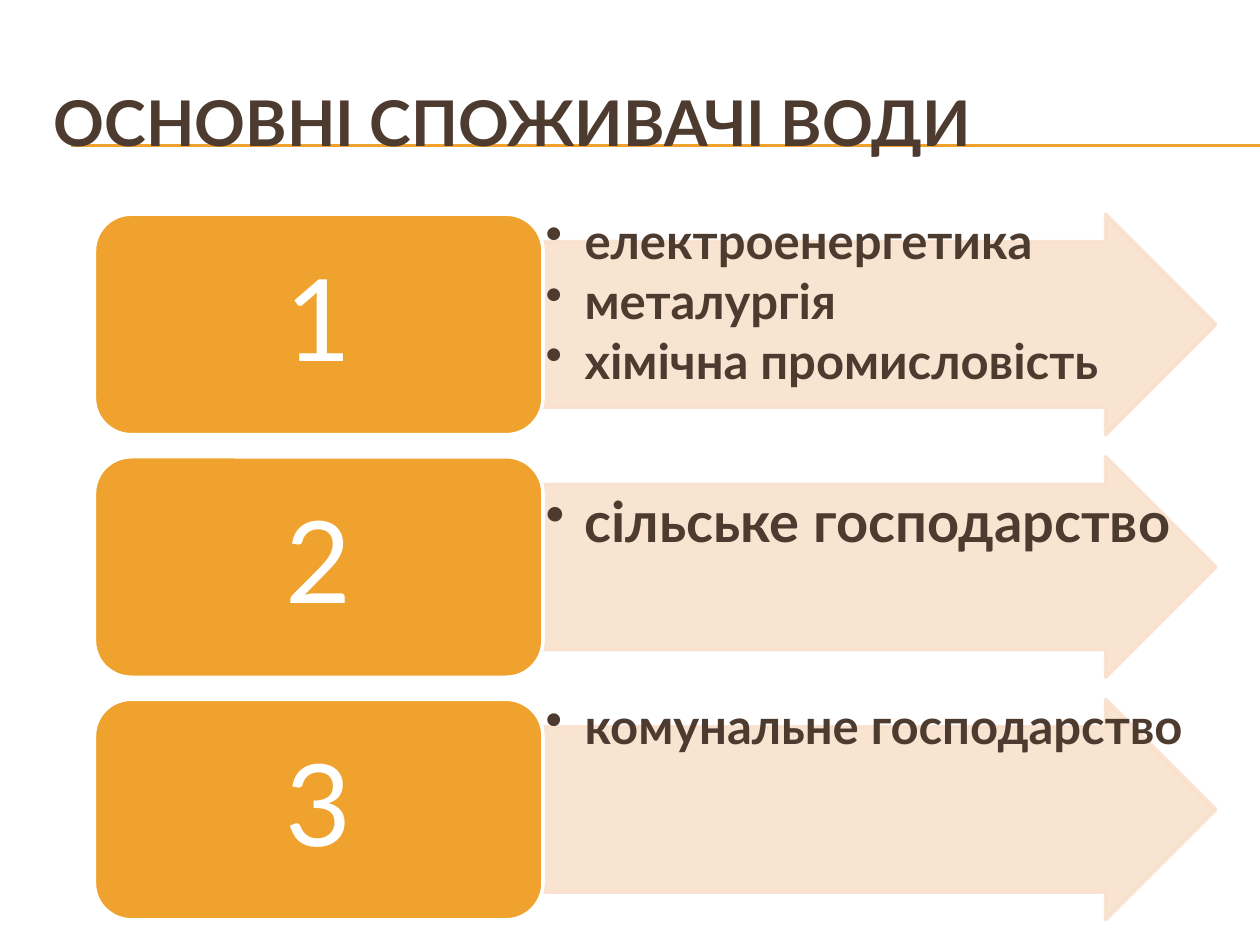
from dataclasses import dataclass

from lxml.etree import SubElement
from pptx import Presentation
from pptx.dml.color import RGBColor
from pptx.enum.shapes import MSO_CONNECTOR, MSO_SHAPE
from pptx.enum.text import MSO_ANCHOR, PP_ALIGN
from pptx.oxml.ns import qn
from pptx.shapes.autoshape import Shape
from pptx.slide import Slide
from pptx.text.text import _Paragraph
from pptx.util import Inches, Pt


@dataclass(frozen=True)
class Theme:
    font: str = "Lato"
    accent: RGBColor = RGBColor(0xF0, 0xA2, 0x2E)
    pale: RGBColor = RGBColor(0xF9, 0xE0, 0xCD)
    dark: RGBColor = RGBColor(0x4E, 0x3B, 0x30)
    white: RGBColor = RGBColor(0xFF, 0xFF, 0xFF)
    pale_alpha: int = 90
    title_size: int = 36
    number_size: int = 65
    rule_width: float = 0.75
    outline_width: float = 2


@dataclass(frozen=True)
class Consumer:
    number: str
    branches: tuple[str, ...]
    size: int
    lead: float = 0


THEME = Theme()
CONSUMERS = (
    Consumer("1", ("електроенергетика", "металургія", "хімічна промисловість"), 28),
    Consumer("2", ("сільське господарство",), 32, lead=0.28),
    Consumer("3", ("комунальне господарство",), 28),
)
ROW_TOP, ROW_STEP, ROW_HEIGHT = 1.7, 1.925, 1.75
NUMBER_LEFT, NUMBER_WIDTH = 0.75, 3.56
ARROW_LEFT, ARROW_WIDTH = NUMBER_LEFT + NUMBER_WIDTH, 5.34
TEXT_INSET, BULLET_INDENT = 0.02, 0.31


def style(paragraph: _Paragraph, size: int, color: RGBColor, bold: bool) -> None:
    font = paragraph.font
    font.name, font.size, font.bold = THEME.font, Pt(size), bold
    font.color.rgb = color


def add_bullet(paragraph: _Paragraph) -> None:
    properties = paragraph._p.get_or_add_pPr()
    properties.set("marL", str(Inches(BULLET_INDENT)))
    properties.set("indent", str(-Inches(BULLET_INDENT)))
    bullet = properties.makeelement(qn("a:buChar"), {"char": "•"})
    properties.insert_element_before(bullet, "a:tabLst", "a:defRPr", "a:extLst")


def add_rule(slide: Slide, y: float) -> None:
    rule = slide.shapes.add_connector(
        MSO_CONNECTOR.STRAIGHT, Inches(0.56), Inches(y), Inches(10), Inches(y)
    )
    rule.line.color.rgb = THEME.accent
    rule.line.width = Pt(THEME.rule_width)
    SubElement(rule._element.spPr, qn("a:effectLst"))


def add_title(slide: Slide, text: str) -> None:
    title = slide.shapes.add_textbox(Inches(0.33), Inches(0.5), Inches(9.5), Inches(0.92))
    frame = title.text_frame
    frame.word_wrap = True
    frame.vertical_anchor = MSO_ANCHOR.MIDDLE
    frame.text = text
    style(frame.paragraphs[0], THEME.title_size, THEME.dark, True)


def add_block(slide: Slide, preset: MSO_SHAPE, left: float, top: float, width: float,
              fill: RGBColor, outline: RGBColor) -> Shape:
    block = slide.shapes.add_shape(
        preset, Inches(left), Inches(top), Inches(width), Inches(ROW_HEIGHT)
    )
    block.shadow.inherit = False
    block.fill.solid()
    block.fill.fore_color.rgb = fill
    block.line.color.rgb = outline
    block.line.width = Pt(THEME.outline_width)
    return block


def add_arrow(slide: Slide, top: float) -> None:
    arrow = add_block(slide, MSO_SHAPE.RIGHT_ARROW, ARROW_LEFT, top, ARROW_WIDTH,
                      THEME.pale, THEME.pale)
    arrow.adjustments[0], arrow.adjustments[1] = 0.75, 0.5
    for color in arrow._element.spPr.iter(qn("a:srgbClr")):
        SubElement(color, qn("a:alpha"), val=str(THEME.pale_alpha * 1000))


def add_branches(slide: Slide, consumer: Consumer, top: float) -> None:
    branches = slide.shapes.add_textbox(
        Inches(ARROW_LEFT), Inches(top), Inches(ARROW_WIDTH), Inches(ROW_HEIGHT)
    )
    frame = branches.text_frame
    frame.word_wrap = True
    frame.margin_left = frame.margin_right = frame.margin_bottom = Inches(TEXT_INSET)
    frame.margin_top = Inches(TEXT_INSET + consumer.lead)
    frame.text = "\n".join(consumer.branches)
    for paragraph in frame.paragraphs:
        paragraph.line_spacing = 0.9
        paragraph.space_after = Pt(consumer.size * 0.15)
        add_bullet(paragraph)
        style(paragraph, consumer.size, THEME.dark, True)


def add_number(slide: Slide, text: str, top: float) -> None:
    number = add_block(slide, MSO_SHAPE.ROUNDED_RECTANGLE, NUMBER_LEFT, top, NUMBER_WIDTH,
                       THEME.accent, THEME.white)
    frame = number.text_frame
    frame.vertical_anchor = MSO_ANCHOR.MIDDLE
    frame.margin_left = frame.margin_right = Inches(0.27)
    frame.margin_top = frame.margin_bottom = Inches(0.14)
    frame.text = text
    paragraph = frame.paragraphs[0]
    paragraph.alignment = PP_ALIGN.CENTER
    paragraph.line_spacing = 0.9
    style(paragraph, THEME.number_size, THEME.white, False)


def main() -> None:
    """Build the slide on the main consumers of water."""
    presentation = Presentation()
    presentation.slide_width, presentation.slide_height = Inches(10), Inches(7.5)
    slide = presentation.slides.add_slide(presentation.slide_layouts[6])
    for y in (1.15, 1.16):
        add_rule(slide, y)
    add_title(slide, "ОСНОВНІ СПОЖИВАЧІ ВОДИ")
    for row, consumer in enumerate(CONSUMERS):
        top = ROW_TOP + row * ROW_STEP
        add_arrow(slide, top)
        add_branches(slide, consumer, top)
        add_number(slide, consumer.number, top)
    presentation.save("out.pptx")


if __name__ == "__main__":
    main()
